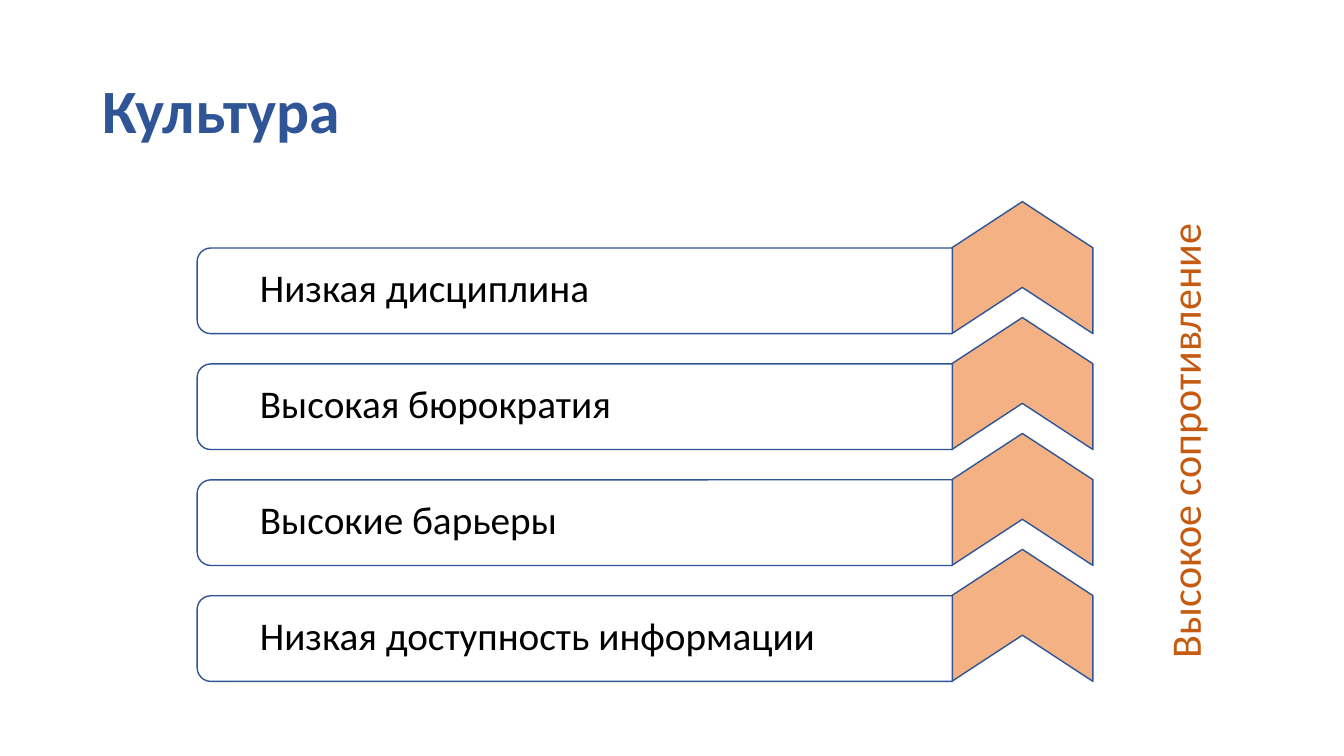
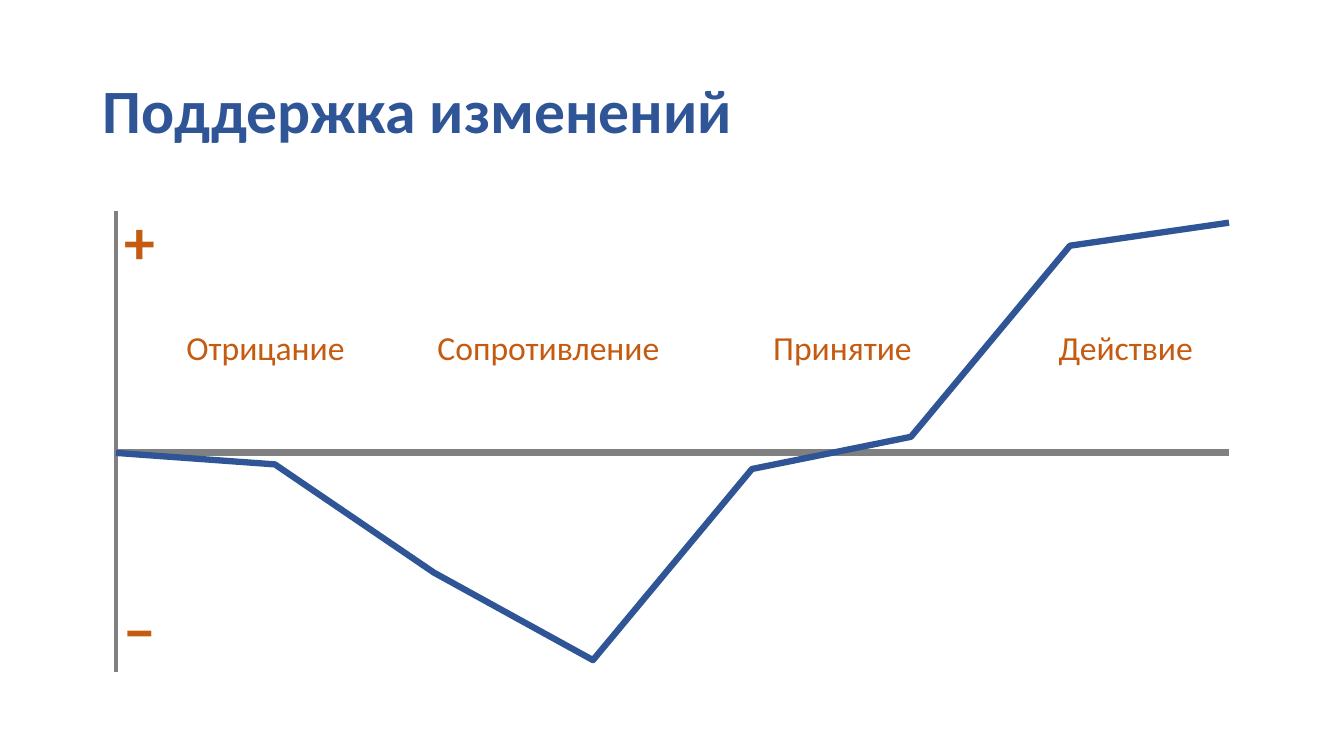
from lxml import etree
from pptx import Presentation
from pptx.chart import data
from pptx.dml import color
from pptx.enum import chart as ch, shapes, text
from pptx.util import Inches, Pt

FONT = "Calibri"
BLUE, RUST, PEACH = "2F5597", "C55A11", "F4B183"
WHITE, BLACK, GREY = "FFFFFF", "000000", "808080"
ROWS = ["Низкая дисциплина", "Высокая бюрократия", "Высокие барьеры",
        "Низкая доступность информации"]
STAGES = [("Отрицание", 1.75, 1.79), ("Сопротивление", 4.24, 2.43),
          ("Принятие", 7.57, 1.59), ("Действие", 10.4, 1.55)]


def rgb(tone):
    return color.RGBColor.from_string(tone)


def label(slide, words, box, size, tone, bold=False):
    item = slide.shapes.add_textbox(*map(Inches, box))
    item.text_frame.word_wrap = False
    para = item.text_frame.paragraphs[0]
    para.text = words
    para.font.name, para.font.size, para.font.bold = FONT, Pt(size), bold
    para.font.color.rgb = rgb(tone)
    return item


deck = Presentation()
deck.slide_width, deck.slide_height = Inches(13.33), Inches(7.5)

slides = []
for words in ("Культура", "Поддержка изменений"):
    slide = deck.slides.add_slide(deck.slide_layouts[5])
    title = slide.shapes.title
    title.left, title.top = Inches(0.92), Inches(0.4)
    title.width, title.height = Inches(11.5), Inches(1.45)
    title.text_frame.vertical_anchor = text.MSO_ANCHOR.MIDDLE
    para = title.text_frame.paragraphs[0]
    para.text = words
    para.alignment = text.PP_ALIGN.LEFT
    para.line_spacing = 0.9
    para.font.name, para.font.size, para.font.bold = FONT, Pt(44), True
    para.font.color.rgb = rgb(BLUE)
    slides.append(slide)
culture, support = slides

kinds = shapes.MSO_SHAPE
thick, long, rise, wide = 0.85, 7.49, 1.31, 1.4
for row, words in enumerate(ROWS):
    top = 2.46 + 1.15 * row
    mid = top + thick / 2
    parts = [
        (kinds.CHEVRON, 10.14, top + thick - rise / 2, rise, wide, 0.35, PEACH),
        (kinds.ROUND_2_SAME_RECTANGLE, 5.7, mid, thick, long, 0.16, WHITE),
    ]
    for kind, x, y, w, h, bend, tone in parts:
        part = culture.shapes.add_shape(
            kind, Inches(x - w / 2), Inches(y - h / 2), Inches(w), Inches(h))
        part.rotation = 270
        part.adjustments[0] = bend
        part.shadow.inherit = False
        part.fill.solid()
        part.fill.fore_color.rgb = rgb(tone)
        part.line.color.rgb = rgb(BLUE)
        part.line.width = Pt(1)
    name = label(culture, words, (2.48, top + 0.16, 5.77, 0.53), 28, BLACK)
    name.text_frame.word_wrap = True
    name.text_frame.paragraphs[0].line_spacing = 0.9

side = label(culture, "Высокое сопротивление", (9.37, 4.07, 4.76, 0.61), 30, RUST)
side.rotation = 270
side.text_frame.word_wrap = True
side.text_frame.paragraphs[0].alignment = text.PP_ALIGN.CENTER

points = data.XyChartData()
curve = points.add_series("Series 1")
for x, y in enumerate([0, -5, -52, -90, -7, 7, 90, 100]):
    curve.add_data_point(x, y)
chart = support.shapes.add_chart(
    ch.XL_CHART_TYPE.XY_SCATTER_SMOOTH_NO_MARKERS,
    *map(Inches, (0.92, 2, 11.5, 4.76)), points).chart
chart.has_legend = chart.has_title = False
chart.font.name, chart.font.size = FONT, Pt(10)
chart.font.color.rgb = rgb(BLACK)
for axis, low, high, width in ((chart.category_axis, 0, 7, 5),
                               (chart.value_axis, -95, 105, 3)):
    axis.minimum_scale, axis.maximum_scale = low, high
    axis.has_major_gridlines = False
    axis.major_tick_mark = axis.minor_tick_mark = ch.XL_TICK_MARK.NONE
    axis.tick_label_position = ch.XL_TICK_LABEL_POSITION.NONE
    axis.format.line.color.rgb = rgb(GREY)
    axis.format.line.width = Pt(width)
trace = chart.plots[0].series[0]
trace.smooth = True
trace.marker.style = ch.XL_MARKER_STYLE.NONE
trace.format.line.color.rgb = rgb(BLUE)
trace.format.line.width = Pt(4.5)

area = chart._chartSpace.xpath("c:chart/c:plotArea")[0]
for old in area.xpath("c:layout"):
    area.remove(old)
space = "{http://schemas.openxmlformats.org/drawingml/2006/chart}"
layout = etree.Element(space + "layout")
area.insert(0, layout)
manual = etree.SubElement(layout, space + "manualLayout")
for tag, val in (("layoutTarget", "inner"), ("xMode", "edge"), ("yMode", "edge"),
                 ("x", "0.02"), ("y", "0.02"), ("w", "0.96"), ("h", "0.96")):
    etree.SubElement(manual, space + tag, val=val)

for words, left, width in STAGES:
    label(support, words, (left, 3.19, width, 0.5), 24, RUST)
for sign, top in (("+", 1.96), ("−", 5.82)):
    label(support, sign, (1.14, top, 0.51, 0.84), 44, RUST, True)

deck.save("out.pptx")
